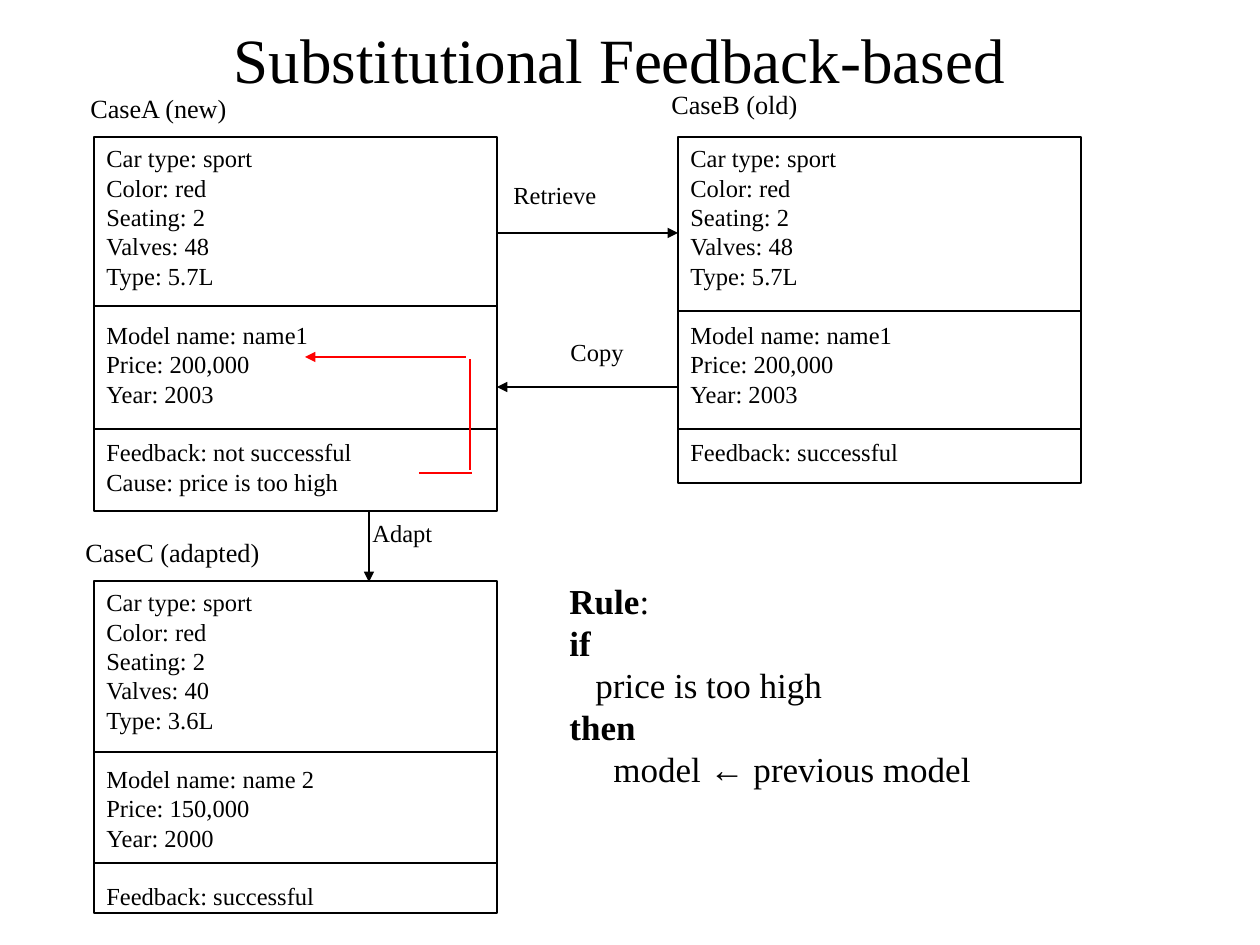
from dataclasses import dataclass

from lxml.etree import SubElement
from pptx import Presentation
from pptx.dml.color import RGBColor
from pptx.enum.shapes import MSO_CONNECTOR, MSO_SHAPE
from pptx.enum.text import MSO_ANCHOR, PP_ALIGN
from pptx.oxml.ns import qn
from pptx.util import Inches, Pt

PX_PER_INCH = 126


@dataclass(frozen=True)
class Theme:
    font: str = "Times New Roman"
    ink: RGBColor = RGBColor(0, 0, 0)
    paper: RGBColor = RGBColor(255, 255, 255)
    feedback: RGBColor = RGBColor(255, 0, 0)
    title: int = 36
    rule: int = 20
    heading: int = 15
    body: int = 14
    line_width: float = 0.75
    section_gap: float = 16.8


def px(length):
    return Inches(length / PX_PER_INCH)


class SlideBuilder:
    def __init__(self, page, theme):
        self.page = page
        self.theme = theme

    def paragraph(self, frame, spans, size, align, first=False, before=0, indent=0):
        """Write one paragraph from (text, bold) spans."""
        para = frame.paragraphs[0] if first else frame.add_paragraph()
        para.alignment = align
        if before:
            para.space_before = Pt(before)
        if indent:
            para._p.get_or_add_pPr().set("marL", str(px(indent)))
        for text, bold in spans:
            span = para.add_run()
            span.text = text
            span.font.name = self.theme.font
            span.font.size = Pt(size)
            span.font.bold = bold
            span.font.color.rgb = self.theme.ink

    def text(self, left, top, width, height, words, size, align=PP_ALIGN.JUSTIFY,
             anchor=MSO_ANCHOR.TOP):
        box = self.page.shapes.add_textbox(px(left), px(top), px(width), px(height))
        frame = box.text_frame
        frame.word_wrap = True
        frame.vertical_anchor = anchor
        self.paragraph(frame, [(words, False)], size, align, first=True)
        return box

    def rule(self, left, top, width, height, lines):
        """Place the rule from (indent, spans) lines."""
        box = self.page.shapes.add_textbox(px(left), px(top), px(width), px(height))
        box.text_frame.word_wrap = False
        for number, (indent, spans) in enumerate(lines):
            self.paragraph(box.text_frame, spans, self.theme.rule, PP_ALIGN.LEFT,
                           first=number == 0, indent=indent)

    def case(self, left, top, width, height, sections, dividers):
        """Draw a case record whose sections are parted by horizontal lines."""
        box = self.page.shapes.add_shape(
            MSO_SHAPE.RECTANGLE, px(left), px(top), px(width), px(height))
        box.shadow.inherit = False
        box.fill.solid()
        box.fill.fore_color.rgb = self.theme.paper
        box.line.color.rgb = self.theme.ink
        box.line.width = Pt(self.theme.line_width)
        frame = box.text_frame
        frame.word_wrap = True
        frame.vertical_anchor = MSO_ANCHOR.TOP
        for section_number, section in enumerate(sections):
            for number, words in enumerate(section):
                starts_later_section = section_number > 0 and number == 0
                self.paragraph(
                    frame, [(words, False)], self.theme.body, PP_ALIGN.JUSTIFY,
                    first=section_number == number == 0,
                    before=self.theme.section_gap if starts_later_section else 0)
        for y in dividers:
            self.line((left, y), (left + width, y))

    def line(self, start, end, color=None, arrow=False):
        connector = self.page.shapes.add_connector(
            MSO_CONNECTOR.STRAIGHT, *map(px, start + end))
        connector.line.color.rgb = color or self.theme.ink
        connector.line.width = Pt(self.theme.line_width)
        if arrow:
            SubElement(connector.line._get_or_add_ln(), qn("a:tailEnd"), type="triangle")
        SubElement(connector._element.spPr, qn("a:effectLst"))


def main():
    theme = Theme()
    deck = Presentation()
    deck.slide_width, deck.slide_height = Inches(10), Inches(7.5)
    page = deck.slides.add_slide(deck.slide_layouts[6])
    slide = SlideBuilder(page, theme)

    slide.text(84, -21, 1071, 158, "Substitutional Feedback-based", theme.title,
               PP_ALIGN.CENTER, MSO_ANCHOR.MIDDLE)

    left, right, top, width = 94, 678, 137, 403
    edge = left + width
    sport = ["Car type: sport", "Color: red", "Seating: 2"]
    engine = sport + ["Valves: 48", "Type: 5.7L"]
    model = ["Model name: name1", "Price: 200,000", "Year: 2003"]
    success = ["Feedback: successful"]

    slide.case(left, top, width, 374,
               [engine, model, ["Feedback: not successful", "Cause: price is too high"]],
               [306, 429])
    slide.case(right, top, width, 346, [engine, model, success], [311, 429])
    slide.case(left, 581, width, 332,
               [sport + ["Valves: 40", "Type: 3.6L"],
                ["Model name: name 2", "Price: 150,000", "Year: 2000"], success],
               [752, 863])

    for start, end in [((edge, 233), (right, 233)), ((right, 387), (edge, 387)),
                       ((369, 512), (369, 582))]:
        slide.line(start, end, arrow=True)

    slide.line((419, 473), (472, 473), theme.feedback)
    slide.line((470, 470), (470, 359), theme.feedback)
    slide.line((466, 357), (305, 357), theme.feedback, arrow=True)

    for x, y, box_width, height, words in [(78, 86, 228, 54, "CaseA (new)"),
                                           (659, 82, 217, 54, "CaseB (old)"),
                                           (73, 530, 291, 67, "CaseC (adapted)")]:
        slide.text(x, y, box_width, height, words, theme.heading)
    for x, y, box_width, height, words in [(501, 174, 150, 54, "Retrieve"),
                                           (558, 331, 108, 55, "Copy"),
                                           (360, 512, 123, 67, "Adapt")]:
        slide.text(x, y, box_width, height, words, theme.body)

    slide.rule(557, 573, 437, 224, [
        (0, [("Rule", True), (":", False)]),
        (0, [("if", True)]),
        (26, [("price is too high", False)]),
        (0, [("then", True)]),
        (44, [("model ← previous model", False)]),
    ])

    deck.save("out.pptx")


if __name__ == "__main__":
    main()
